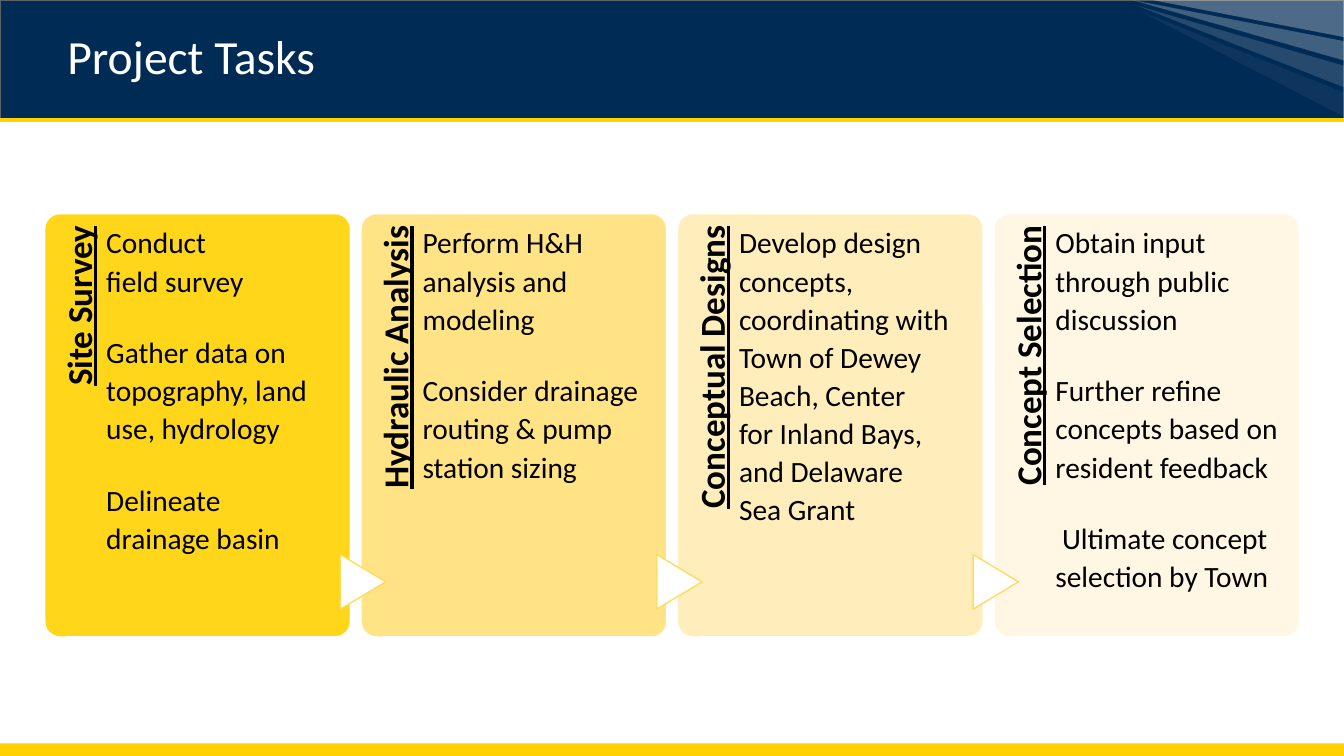
from lxml import etree
from pptx import Presentation
from pptx.dml.color import RGBColor as Rgb
from pptx.enum.shapes import MSO_CONNECTOR as Link, MSO_SHAPE as Form
from pptx.enum.text import MSO_ANCHOR as Anchor, PP_ALIGN as Align
from pptx.oxml.ns import qn
from pptx.util import Pt

WIDTH, HEIGHT = 960, 540
FONT = "Calibri"
COLORS = {
    "navy": "002B55", "slate": "5C6368", "gold": "FFD200", "white": "FFFFFF",
    "black": "000000", "amber": "FFDB5F", "sand": "FFE594", "cream": "FFF0C8",
}
TASKS = [
    ("Site Survey", "gold", 90, [
        "Conduct\vfield survey",
        "Gather data on topography, land use, hydrology",
        "Delineate\vdrainage basin"]),
    ("Hydraulic Analysis", "amber", 77, [
        "Perform H&H analysis and modeling",
        "Consider drainage routing & pump station sizing"]),
    ("Conceptual Designs", "sand", 63, [
        "Develop design concepts, coordinating with Town of Dewey Beach, "
        "Center\vfor Inland Bays,\vand Delaware\vSea Grant"]),
    ("Concept Selection", "cream", 50, [
        "Obtain input through public discussion",
        "Further refine concepts based on resident feedback",
        " Ultimate concept selection by Town"]),
]
RAYS = [
    (823, 0, 0, 26.5, 30),
    (808.6, 0, 29.4, 43.2, 25),
    (812.9, 4.3, 47, 62.4, 15),
    (814.3, 7.9, 66, 83.4, 5),
]


def color(name):
    return Rgb.from_string(COLORS[name])


def paint(shape, fill, line=None, alpha=100):
    shape.shadow.inherit = False
    shape.fill.solid()
    shape.fill.fore_color.rgb = color(fill)
    if alpha < 100:
        tone = shape.fill._xPr.find(qn("a:solidFill"))[0]
        etree.SubElement(tone, qn("a:alpha"), val=str(alpha * 1000))
    if line:
        shape.line.color.rgb = color(line)
        shape.line.width = Pt(1)
    else:
        shape.line.fill.background()


def add_form(slide, form, box, fill, line=None, alpha=100):
    shape = slide.shapes.add_shape(form, *map(Pt, box))
    paint(shape, fill, line, alpha)
    return shape


def add_text(slide, box, text, size, insets, tint="black", bold=False):
    shape = slide.shapes.add_textbox(*map(Pt, box))
    frame = shape.text_frame
    frame.word_wrap = True
    (frame.margin_left, frame.margin_top,
     frame.margin_right, frame.margin_bottom) = map(Pt, insets)
    frame.text = text
    for para in frame.paragraphs:
        para.line_spacing = 1.08
        para.space_after = Pt(24)
        for run in para.runs:
            run.font.name = FONT
            run.font.size = Pt(size)
            run.font.color.rgb = color(tint)
            run.font.bold = bold
            run.font.underline = bold
    return shape


def add_rays(slide, right):
    for left, top, high, low, alpha in RAYS:
        pen = slide.shapes.build_freeform(Pt(left), Pt(top))
        pen.add_line_segments([(Pt(right), Pt(high)), (Pt(right), Pt(low))])
        paint(pen.convert_to_shape(), "white", alpha=alpha)


def add_header(slide, left, top, width, height):
    add_form(slide, Form.RECTANGLE, (left, top, width, height), "navy", "slate")
    add_rays(slide, left + width)
    base = Pt(top + height)
    rule = slide.shapes.add_connector(
        Link.STRAIGHT, Pt(left), base, Pt(left + width), base)
    rule.line.color.rgb = color("gold")
    rule.line.width = Pt(3)
    etree.SubElement(rule._element.spPr, qn("a:effectLst"))
    title = add_text(slide, (left + 41, top + 12.2, 335.5, 60.5),
                     "Project Tasks", 34, (7.2, 3.6, 7.2, 3.6), "white")
    title.text_frame.vertical_anchor = Anchor.MIDDLE
    para = title.text_frame.paragraphs[0]
    para.line_spacing = Pt(35)
    para.space_after = Pt(0)


def add_card(slide, left, top, width, height, task, arrow):
    name, fill, alpha, notes = task
    card = add_form(slide, Form.ROUNDED_RECTANGLE, (left, top, width, height),
                    fill, "white", alpha)
    card.adjustments[0] = 0.05
    strip, span = 44, 247.5
    label = add_text(slide,
                     (left + (strip - span) / 2, top + (span - strip) / 2,
                      span, strip),
                     name, 25, (0, 6.5, 8.6, 0), bold=True)
    label.rotation = 270
    label.text_frame.paragraphs[0].alignment = Align.RIGHT
    if arrow:
        wide, tall = 39, 32.4
        mark = add_form(slide, Form.FLOWCHART_EXTRACT,
                        (left + 1.4 - wide / 2, top + 263 - tall / 2,
                         wide, tall), "white", "amber")
        mark.rotation = 90
    add_text(slide, (left + strip, top, 162.7, height), "\n".join(notes),
             21, (0, 5.8, 0, 0))


def add_tasks(slide, left, top, width, height):
    gap = 7.6
    size = (width - gap * (len(TASKS) - 1)) / len(TASKS)
    for index, task in enumerate(TASKS):
        add_card(slide, left + index * (size + gap), top, size, height,
                 task, index > 0)


def main():
    deck = Presentation()
    deck.slide_width, deck.slide_height = Pt(WIDTH), Pt(HEIGHT)
    slide = deck.slides.add_slide(deck.slide_layouts[6])
    add_header(slide, 0, 0, WIDTH, 85.5)
    add_form(slide, Form.RECTANGLE, (0, HEIGHT - 9, WIDTH, 9), "gold")
    add_tasks(slide, 31.9, 152.6, 896.4, 302.4)
    deck.save("out.pptx")


if __name__ == "__main__":
    main()
